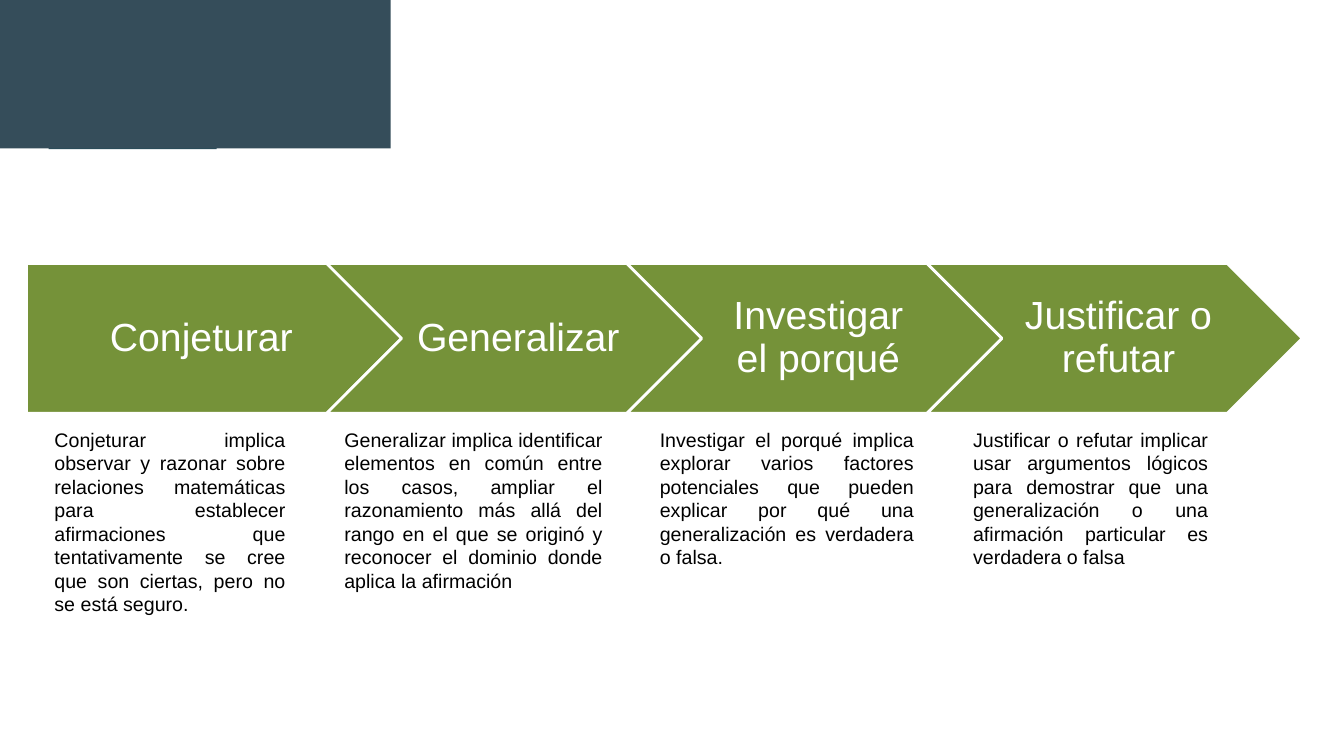
"""Build a slide with four process arrows and a description under each."""
from pptx import Presentation
from pptx.dml.color import RGBColor
from pptx.enum.shapes import MSO_SHAPE
from pptx.enum.text import MSO_ANCHOR, MSO_AUTO_SIZE, PP_ALIGN
from pptx.util import Pt

COLORS = {"teal": "264C59", "slate": "354D5A", "green": "759239",
          "white": "FFFFFF", "black": "000000"}
STEPS = [
    ("Conjeturar", 31.8, 179.3, 143.3,
     "Conjeturar implica observar y razonar sobre relaciones matemáticas para "
     "establecer afirmaciones que tentativamente se cree que son ciertas, pero "
     "no se está seguro."),
    ("Generalizar", 238.9, 198.7, 126,
     "Generalizar implica identificar elementos en común entre los casos, ampliar "
     "el razonamiento más allá del rango en el que se originó y reconocer el "
     "dominio donde aplica la afirmación"),
    ("Investigar el porqué", 464.2, 195.8, 108.7,
     "Investigar el porqué implica explorar varios factores potenciales que pueden "
     "explicar por qué una generalización es verdadera o falsa."),
    ("Justificar o refutar", 688, 182.2, 108.7,
     "Justificar o refutar implicar usar argumentos lógicos para demostrar que una "
     "generalización o una afirmación particular es verdadera o falsa"),
]
ARROW_LEFT, ARROW_TOP, ARROW_PITCH = 19, 188.2, 214.4


def add_filled(shape_type, left, top, width, height, color):
    sp = s.shapes.add_shape(shape_type, Pt(left), Pt(top), Pt(width), Pt(height))
    sp.shadow.inherit = False
    sp.fill.solid()
    sp.fill.fore_color.rgb = RGBColor.from_string(COLORS[color])
    sp.line.fill.background()
    return sp


def write(tf, text, size, color, align):
    tf.word_wrap = True
    tf.text = text
    p = tf.paragraphs[0]
    p.alignment = align
    r = p.runs[0]
    r.font.name = "Arial"
    r.font.size = Pt(size)
    r.font.color.rgb = RGBColor.from_string(COLORS[color])
    return p


prs = Presentation()
prs.slide_width, prs.slide_height = Pt(960), Pt(540)
s = prs.slides.add_slide(prs.slide_layouts[6])

add_filled(MSO_SHAPE.RECTANGLE, 34.8, 58.4, 120, 48.2, "teal")
add_filled(MSO_SHAPE.RECTANGLE, 0, 0, 279, 106, "slate")

for i, (name, left, width, height, description) in enumerate(STEPS):
    kind = MSO_SHAPE.CHEVRON if i else MSO_SHAPE.PENTAGON
    sp = add_filled(kind, ARROW_LEFT + i * ARROW_PITCH, ARROW_TOP, 268, 107, "green")
    sp.line.color.rgb = RGBColor.from_string(COLORS["white"])
    sp.line.width = Pt(2)
    tf = sp.text_frame
    tf.vertical_anchor = MSO_ANCHOR.MIDDLE
    tf.margin_left, tf.margin_right = Pt(8.4 if i else 11.2), Pt(2.8)
    tf.margin_top = tf.margin_bottom = Pt(5.6)
    p = write(tf, name, 28, "white", PP_ALIGN.CENTER)
    p.line_spacing = 0.9

    tb = s.shapes.add_textbox(Pt(left), Pt(301.8), Pt(width), Pt(height))
    write(tb.text_frame, description, 14, "black", PP_ALIGN.JUSTIFY)
    tb.text_frame.auto_size = MSO_AUTO_SIZE.SHAPE_TO_FIT_TEXT

prs.save("out.pptx")
